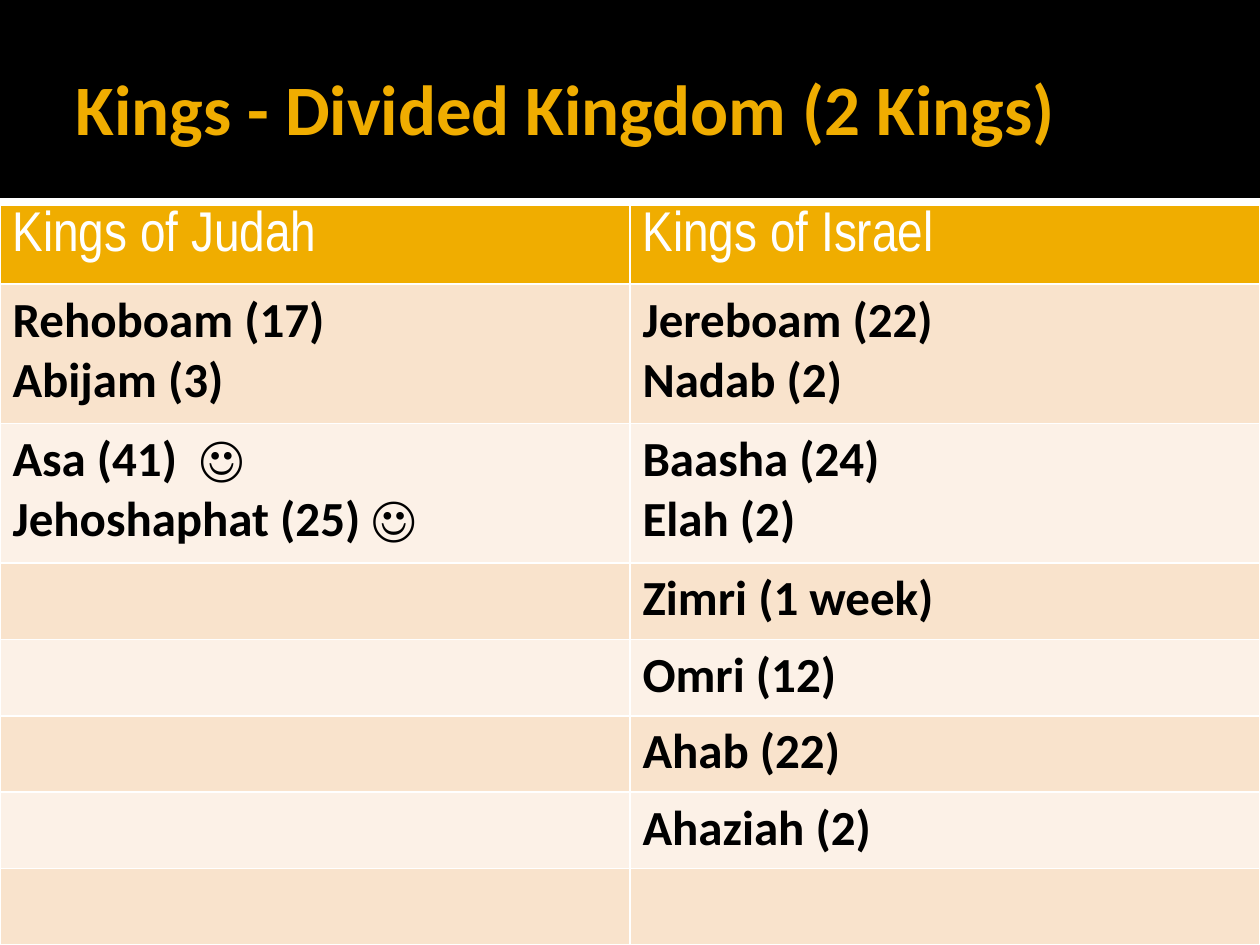
from lxml import etree
from pptx import Presentation
from pptx.dml.color import RGBColor as RGB
from pptx.enum.shapes import MSO_SHAPE as Kind
from pptx.enum.text import MSO_ANCHOR as Anchor, MSO_AUTO_SIZE as Fit, PP_ALIGN as Align
from pptx.oxml import parse_xml
from pptx.util import Cm, Pt

GOLD = RGB(0xF0, 0xAD, 0x00)
SAND = RGB(0xF9, 0xE3, 0xCC)
CREAM = RGB(0xFC, 0xF1, 0xE7)
BLACK = RGB(0, 0, 0)
WHITE = RGB(255, 255, 255)
SHADE = (
    '<a:effectLst xmlns:a="http://schemas.openxmlformats.org/drawingml/2006/main">'
    '<a:outerShdw blurRad="31750" dist="10160" dir="5400000" rotWithShape="0">'
    '<a:srgbClr val="000000"><a:alpha val="60000"/></a:srgbClr>'
    '</a:outerShdw></a:effectLst>'
)


def style(para, font, size, color, bold):
    para.alignment = Align.LEFT
    for run in para.runs:
        run.font.name = font
        run.font.size = Pt(size)
        run.font.color.rgb = color
        run.font.bold = bold


deck = Presentation()
deck.slide_width, deck.slide_height = Cm(25.4), Cm(19.05)
slide = deck.slides.add_slide(deck.slide_layouts[5])
title = slide.shapes.title

for top, high, color in [(3.99, 0.13, WHITE), (0, 3.99, BLACK)]:
    band = slide.shapes.add_shape(Kind.RECTANGLE, 0, Cm(top), Cm(25.4), Cm(high))
    band.fill.solid()
    band.fill.fore_color.rgb = color
    band.line.fill.background()
    band.shadow.inherit = False
    if color == WHITE:
        props = band.element.spPr
        props.replace(props.find("{*}effectLst"), parse_xml(SHADE))
    title.element.addprevious(band.element)

title.left, title.top, title.width, title.height = Cm(1.27), Cm(0.43), Cm(22.86), Cm(3.48)
frame = title.text_frame
frame.text = "Kings - Divided Kingdom (2 Kings)"
frame.auto_size = Fit.NONE
frame.vertical_anchor = Anchor.MIDDLE
frame.margin_left = Cm(0.25)
frame.margin_right = frame.margin_top = frame.margin_bottom = Cm(0.13)
style(frame.paragraphs[0], "Calibri", 40.5, GOLD, True)

rows = [
    ("Kings of Judah", "Kings of Israel"),
    ("Rehoboam (17)\nAbijam (3)", "Jereboam (22)\nNadab (2)"),
    ("Asa (41)  ☺\nJehoshaphat (25) ☺", "Baasha (24)\nElah (2)"),
    ("", "Zimri (1 week)"),
    ("", "Omri (12)"),
    ("", "Ahab (22)"),
    ("", "Ahaziah (2)"),
    ("", ""),
]
highs = [1.6] + [2.81] * 2 + [1.54] * 5
table = slide.shapes.add_table(len(rows), 2, 0, Cm(4.13), Cm(25.4), Cm(sum(highs))).table
for col in table.columns:
    col.width = Cm(12.7)

for r, (names, high) in enumerate(zip(rows, highs)):
    table.rows[r].height = Cm(high)
    for c, name in enumerate(names):
        cell = table.cell(r, c)
        cell.fill.solid()
        cell.fill.fore_color.rgb = GOLD if r == 0 else SAND if r % 2 else CREAM
        cell.text_frame.text = name
        for para in cell.text_frame.paragraphs:
            if r == 0:
                style(para, "Arial Narrow", 32, WHITE, False)
            else:
                style(para, "Calibri", 28, BLACK, True)

deck.save("out.pptx")
